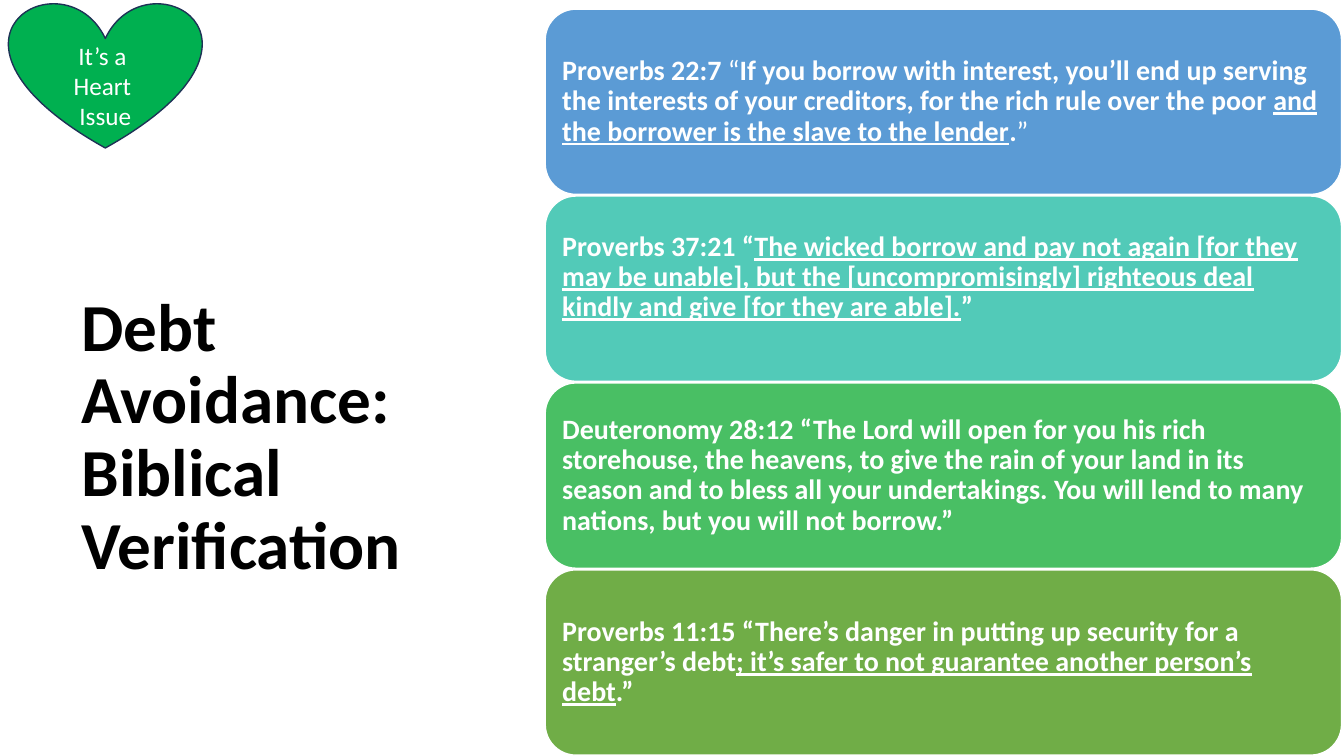
from dataclasses import dataclass

import pptx
import pptx.dml.color
import pptx.enum.shapes
import pptx.enum.text
import pptx.util
from pptx.dml.color import RGBColor
from pptx.enum.shapes import MSO_SHAPE
from pptx.enum.text import MSO_ANCHOR, MSO_AUTO_SIZE, PP_ALIGN
from pptx.util import Cm

WHITE = RGBColor(0xFF, 0xFF, 0xFF)
BLACK = RGBColor(0x00, 0x00, 0x00)
BLUE = RGBColor(0x5B, 0x9B, 0xD5)
TEAL = RGBColor(0x52, 0xCA, 0xB8)
GREEN = RGBColor(0x49, 0xBF, 0x64)
OLIVE = RGBColor(0x70, 0xAD, 0x47)
HEART_GREEN = RGBColor(0x00, 0xB0, 0x50)
HEART_LINE = RGBColor(0x1E, 0x32, 0x56)

FONT = "Calibri"
CARD_LEFT, CARD_TOP, CARD_WIDTH, CARD_HEIGHT = 13.74, 0.23, 20.07, 4.67
CARD_PITCH = 4.71
CARD_INSET = 0.2


@dataclass(frozen=True)
class Span:
    text: str
    bold: bool = True
    underline: bool = False


@dataclass(frozen=True)
class Verse:
    fill: RGBColor
    spans: tuple[Span, ...]
    lift: float = 0  # extra bottom inset in cm


VERSES = (
    Verse(BLUE, (
        Span("Proverbs 22:7 "),
        Span("“", bold=False),
        Span("If you borrow with interest, you’ll end up serving the interests "
             "of your creditors, for the rich rule over the poor "),
        Span("and the borrower is the slave to the lender", underline=True),
        Span("."),
        Span("”", bold=False),
    )),
    Verse(TEAL, (
        Span("Proverbs 37:21 “"),
        Span("The wicked borrow and pay not again [for they may be unable], "
             "but the [uncompromisingly] righteous deal kindly and give "
             "[for they are able].", underline=True),
        Span("”"),
    ), lift=0.56),
    Verse(GREEN, (
        Span("Deuteronomy 28:12 “The Lord will open for you his rich storehouse, "
             "the heavens, to give the rain of your land in its season and to "
             "bless all your undertakings. You will lend to many nations, "
             "but you will not borrow.”"),
    )),
    Verse(OLIVE, (
        Span("Proverbs 11:15 “There’s danger in putting up security for a "
             "stranger’s debt"),
        Span("; it’s safer to not guarantee another person’s debt", underline=True),
        Span(".”"),
    )),
)


def add_run(p, span: Span, size: int, color: RGBColor) -> None:
    r = p.add_run()
    r.text = span.text
    r.font.name = FONT
    r.font.size = pptx.util.Pt(size)
    r.font.bold = span.bold
    r.font.underline = span.underline
    r.font.color.rgb = color


def add_outlined(s, kind: MSO_SHAPE, box: tuple[float, ...],
                 fill: RGBColor, line: RGBColor):
    """Add a filled, shadowless shape with a middle-anchored text frame."""
    sp = s.shapes.add_shape(kind, *(Cm(v) for v in box))
    sp.shadow.inherit = False
    sp.fill.solid()
    sp.fill.fore_color.rgb = fill
    sp.line.color.rgb = line
    sp.line.width = pptx.util.Pt(1)
    sp.text_frame.word_wrap = True
    sp.text_frame.vertical_anchor = MSO_ANCHOR.MIDDLE
    return sp


def add_verse(s, verse: Verse, row: int) -> None:
    box = (CARD_LEFT, CARD_TOP + row * CARD_PITCH, CARD_WIDTH, CARD_HEIGHT)
    tf = add_outlined(s, MSO_SHAPE.ROUNDED_RECTANGLE, box, verse.fill, WHITE).text_frame
    tf.margin_left = tf.margin_right = tf.margin_top = Cm(CARD_INSET)
    tf.margin_bottom = Cm(CARD_INSET + verse.lift)
    p = tf.paragraphs[0]
    p.alignment = PP_ALIGN.LEFT
    p.line_spacing = 0.9
    for span in verse.spans:
        add_run(p, span, 20, WHITE)


def add_heart(s) -> None:
    sp = add_outlined(s, MSO_SHAPE.HEART, (0.23, 0.05, 4.85, 3.68),
                      HEART_GREEN, HEART_LINE)
    tf = sp.text_frame
    tf.margin_top = Cm(0.95)
    for i, text in enumerate(("It’s a ", "Heart ", "Issue")):
        p = tf.add_paragraph() if i else tf.paragraphs[0]
        p.alignment = PP_ALIGN.CENTER
        add_run(p, Span(text, bold=False), 18, WHITE)


def fill_title(s) -> None:
    sp = s.shapes.title
    sp.left, sp.top, sp.width, sp.height = Cm(1.8), Cm(3.05), Cm(10.54), Cm(16)
    tf = sp.text_frame
    tf.word_wrap = True
    tf.auto_size = MSO_AUTO_SIZE.NONE
    tf.vertical_anchor = MSO_ANCHOR.MIDDLE
    p = tf.paragraphs[0]
    p.alignment = PP_ALIGN.LEFT
    p.line_spacing = 0.9
    add_run(p, Span("Debt Avoidance:"), 48, BLACK)
    p.add_line_break()
    add_run(p, Span("Biblical Verification"), 48, BLACK)


def main() -> None:
    prs = pptx.Presentation()
    prs.slide_width, prs.slide_height = Cm(33.87), Cm(19.05)
    s = prs.slides.add_slide(prs.slide_layouts[5])
    fill_title(s)
    for row, verse in enumerate(VERSES):
        add_verse(s, verse, row)
    add_heart(s)
    prs.save("out.pptx")


if __name__ == "__main__":
    main()
